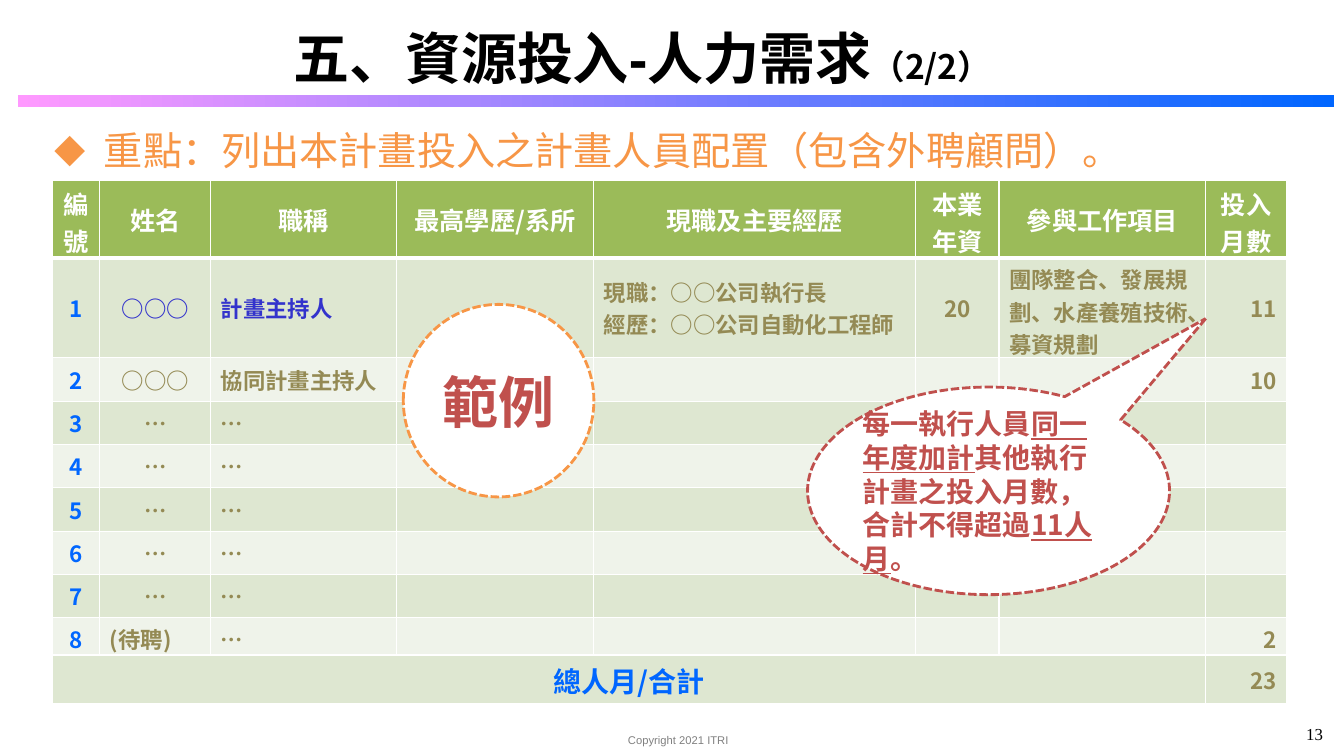
import pptx
import pptx.dml.color
import pptx.enum.dml
import pptx.enum.shapes
import pptx.enum.text
import pptx.oxml.ns
import pptx.util
from lxml import etree

Inches, Pt = pptx.util.Inches, pptx.util.Pt
ALIGN = pptx.enum.text.PP_ALIGN
ANCHOR = pptx.enum.text.MSO_ANCHOR
SHAPES = pptx.enum.shapes.MSO_SHAPE
CJK = "Noto Sans CJK SC"
BLACK, WHITE, ORANGE, RED = "000000", "FFFFFF", "F79646", "C0504D"
BLUE, INDIGO, OLIVE, GREEN = "0066FF", "3333CC", "948A54", "9BBB59"
BANDS = ["DEE7D1", "EFF3EA"]


def rgb(value):
    return pptx.dml.color.RGBColor.from_string(value)


def set_all(target, formats):
    for name, value in formats.items():
        setattr(target, name, value)


def add_xml(parent, tag, **attributes):
    return etree.SubElement(parent, pptx.oxml.ns.qn(tag), attributes)


class StaffingSlide:
    """Holds the slide and the shared text style."""

    def __init__(self, slide):
        self.slide = slide
        self.tight = dict(zip(("margin_left", "margin_right", "margin_top", "margin_bottom"),
                              map(Inches, (0.02, 0.02, 0.01, 0.01))))

    def add_text(self, paragraph, text, size, color, font=CJK, **formats):
        run = paragraph.add_run()
        run.text = text
        set_all(run.font, {"name": font, "size": Pt(size), **formats})
        run.font.color.rgb = rgb(color)
        add_xml(run.font._element, "a:ea", typeface=CJK)

    def placeholder(self, index, box, **frame_formats):
        holder = self.slide.placeholders[index]
        set_all(holder, dict(zip(("left", "top", "width", "height"), map(Inches, box))))
        set_all(holder.text_frame, {"auto_size": pptx.enum.text.MSO_AUTO_SIZE.NONE,
                                    "word_wrap": True, **frame_formats})
        return holder.text_frame.paragraphs[0]

    def label(self, box, text, size, color, font, align, wrap):
        frame = self.slide.shapes.add_textbox(*map(Inches, box)).text_frame
        frame.word_wrap = wrap
        frame.paragraphs[0].alignment = align
        self.add_text(frame.paragraphs[0], text, size, color, font)

    def gradient_bar(self, box, colors):
        bar = self.slide.shapes.add_shape(SHAPES.RECTANGLE, *map(Inches, box))
        bar.shadow.inherit = False
        bar.line.fill.background()
        bar.fill.gradient()
        bar.fill.gradient_angle = 0
        for stop, color in zip(bar.fill.gradient_stops, colors):
            stop.color.rgb = rgb(color)

    def dashed_shape(self, kind, box, line_color, align):
        shape = self.slide.shapes.add_shape(kind, *map(Inches, box))
        shape.shadow.inherit = False
        shape.fill.solid()
        shape.fill.fore_color.rgb = rgb(WHITE)
        shape.line.color.rgb = rgb(line_color)
        set_all(shape.line, {"width": Pt(2),
                             "dash_style": pptx.enum.dml.MSO_LINE.SQUARE_DOT})
        set_all(shape.text_frame, {"word_wrap": True, "vertical_anchor": ANCHOR.MIDDLE,
                                   **self.tight})
        paragraph = shape.text_frame.paragraphs[0]
        paragraph.alignment = align
        return shape, paragraph

    def table(self, box, widths, heights):
        table = self.slide.shapes.add_table(len(heights), len(widths),
                                            *map(Inches, box)).table
        for column, width in zip(table.columns, widths):
            column.width = Inches(width)
        for row, height in zip(table.rows, heights):
            row.height = Inches(height)
        return table

    def cell(self, cell, text, size, color, fill, align, bottom=1):
        properties = cell._tc.get_or_add_tcPr()
        for side, width in (("L", 1), ("R", 1), ("T", 1), ("B", bottom)):
            border = add_xml(properties, "a:ln" + side, w=str(Pt(width)))
            add_xml(add_xml(border, "a:solidFill"), "a:srgbClr", val=WHITE)
        cell.fill.solid()
        cell.fill.fore_color.rgb = rgb(fill)
        cell.vertical_anchor = ANCHOR.MIDDLE
        frame = cell.text_frame
        for number, line in enumerate(text.split("\n")):
            paragraph = frame.add_paragraph() if number else frame.paragraphs[0]
            paragraph.alignment = align
            if line:
                self.add_text(paragraph, line, size, color, bold=True)
            else:
                paragraph.font.size = Pt(size)


def main():
    deck = pptx.Presentation()
    deck.slide_width, deck.slide_height = Inches(13.33), Inches(7.5)
    page = StaffingSlide(deck.slides.add_slide(deck.slide_layouts[1]))

    # Page frame
    page.gradient_bar((0.18, 0.94, 13.05, 0.12), ("FF99FF", BLUE))
    page.label((6.13, 7.23, 1.21, 0.24), "Copyright 2021 ITRI", 8, "808080",
               "Arial", ALIGN.LEFT, False)
    page.label((12.65, 7.13, 0.57, 0.33), "13", 12, BLACK,
               "Times New Roman", ALIGN.RIGHT, True)

    # Title and key point
    title = page.placeholder(0, (1.81, 0.15, 9.12, 0.69), vertical_anchor=ANCHOR.MIDDLE)
    set_all(title, {"alignment": ALIGN.CENTER, "line_spacing": 1.2})
    page.add_text(title, "五、資源投入-人力需求", 40, BLACK, "Arial", bold=True)
    page.add_text(title, "（2/2）", 24, BLACK, bold=True)

    key_point = page.placeholder(1, (0.52, 1.24, 12.13, 0.55), **page.tight)
    indent = key_point._p.get_or_add_pPr()
    indent.set("marL", str(Inches(0.49)))
    indent.set("indent", str(-Inches(0.49)))
    add_xml(indent, "a:buSzPct", val="80000")
    add_xml(indent, "a:buFont", typeface=CJK)
    add_xml(indent, "a:buChar", char="◆")
    set_all(key_point, {"space_before": Pt(0), "space_after": Pt(2)})
    page.add_text(key_point, "重點：列出本計畫投入之計畫人員配置（包含外聘顧問）。", 28, ORANGE)

    # Staffing table
    headings = ["編號", "姓名", "職稱", "最高學歷/系所", "現職及主要經歷",
                "本業年資", "參與工作項目", "投入月數"]
    staff = [
        ["1", "○○○", "計畫主持人", "", "現職：○○公司執行長\n經歷：○○公司自動化工程師",
         "20", "團隊整合、發展規劃、水產養殖技術、募資規劃", "11"],
        ["2", "○○○", "協同計畫主持人", "", "", "", "", "10"],
        *[[str(number), "…", "…", "", "", "", "", ""] for number in range(3, 8)],
        ["8", "(待聘)", "…", "", "", "", "", "2"],
    ]
    aligns = [ALIGN.CENTER, ALIGN.CENTER, ALIGN.LEFT, ALIGN.LEFT, ALIGN.LEFT,
              ALIGN.CENTER, ALIGN.LEFT, ALIGN.RIGHT]
    staffing = page.table((0.52, 1.79, 12.25, 5.19),
                          [0.47, 1.1, 1.84, 1.96, 3.19, 0.83, 2.05, 0.8],
                          [0.77, 0.99] + [0.43] * 6 + [0.37, 0.48])
    for column, heading in enumerate(headings):
        page.cell(staffing.cell(0, column), heading, 18, WHITE, GREEN, ALIGN.CENTER, bottom=3)
    for row, person in enumerate(staff, 1):
        for column, (text, align) in enumerate(zip(person, aligns)):
            leader = row == 1 and column in (1, 2)
            color = BLUE if column == 0 else INDIGO if leader else OLIVE
            if text == "(待聘)":
                align = ALIGN.LEFT
            page.cell(staffing.cell(row, column), text, 16, color, BANDS[(row - 1) % 2], align)

    # Total row
    total = len(staff) + 1
    staffing.cell(total, 0).merge(staffing.cell(total, 6))
    page.cell(staffing.cell(total, 0), "總人月/合計", 20, BLUE, BANDS[0], ALIGN.CENTER)
    page.cell(staffing.cell(total, 7), "23", 16, OLIVE, BANDS[0], ALIGN.RIGHT)

    # Example badge and limit on months
    _, example = page.dashed_shape(SHAPES.OVAL, (4, 3.02, 1.89, 1.91), ORANGE, ALIGN.CENTER)
    page.add_text(example, "範例", 40, RED, bold=True)

    callout, limit = page.dashed_shape(SHAPES.OVAL_CALLOUT, (8.01, 3.84, 3.59, 2.06),
                                       RED, ALIGN.LEFT)
    callout.adjustments[0], callout.adjustments[1] = 0.6, -0.83
    for text, underline in (("每一執行人員", False), ("同一年度加計", True),
                            ("其他執行計畫之投入月數，合計不得超過", False),
                            ("11人月", True), ("。", False)):
        page.add_text(limit, text, 20, RED, bold=True, underline=underline)

    deck.save("out.pptx")


if __name__ == "__main__":
    main()
